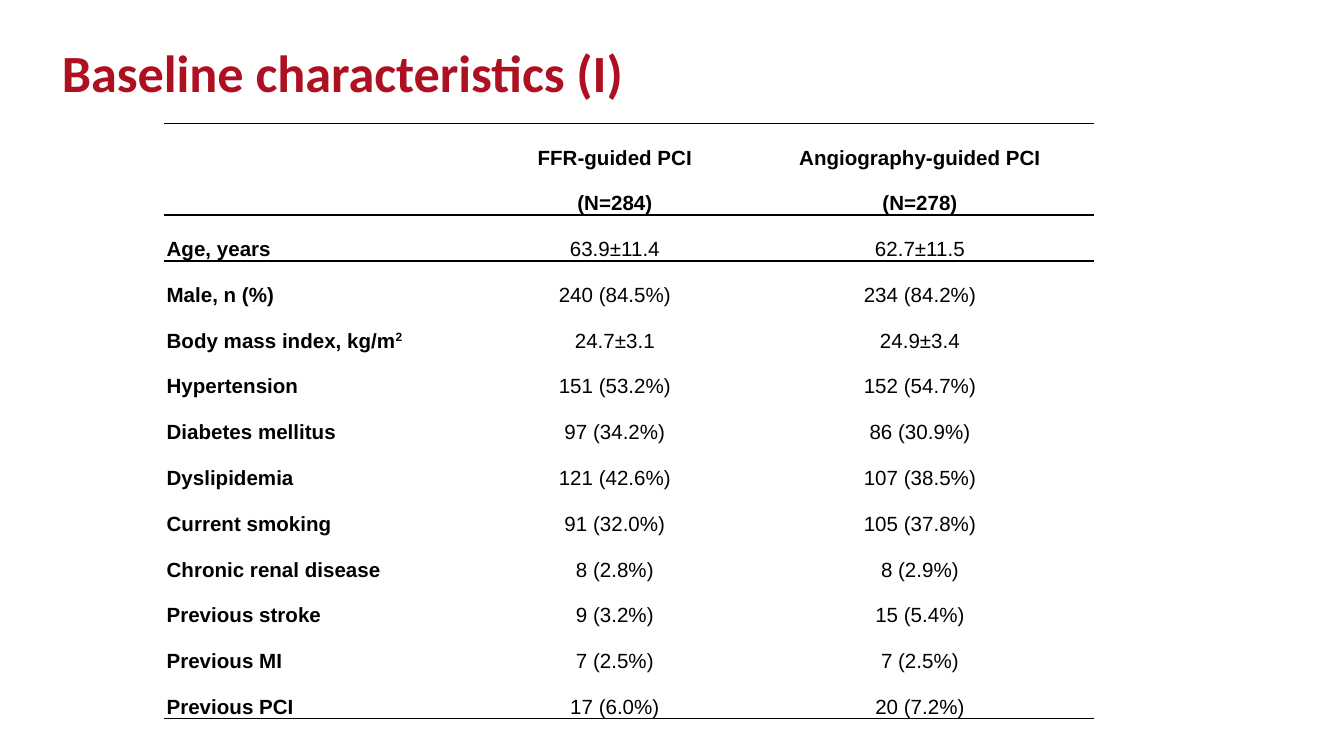
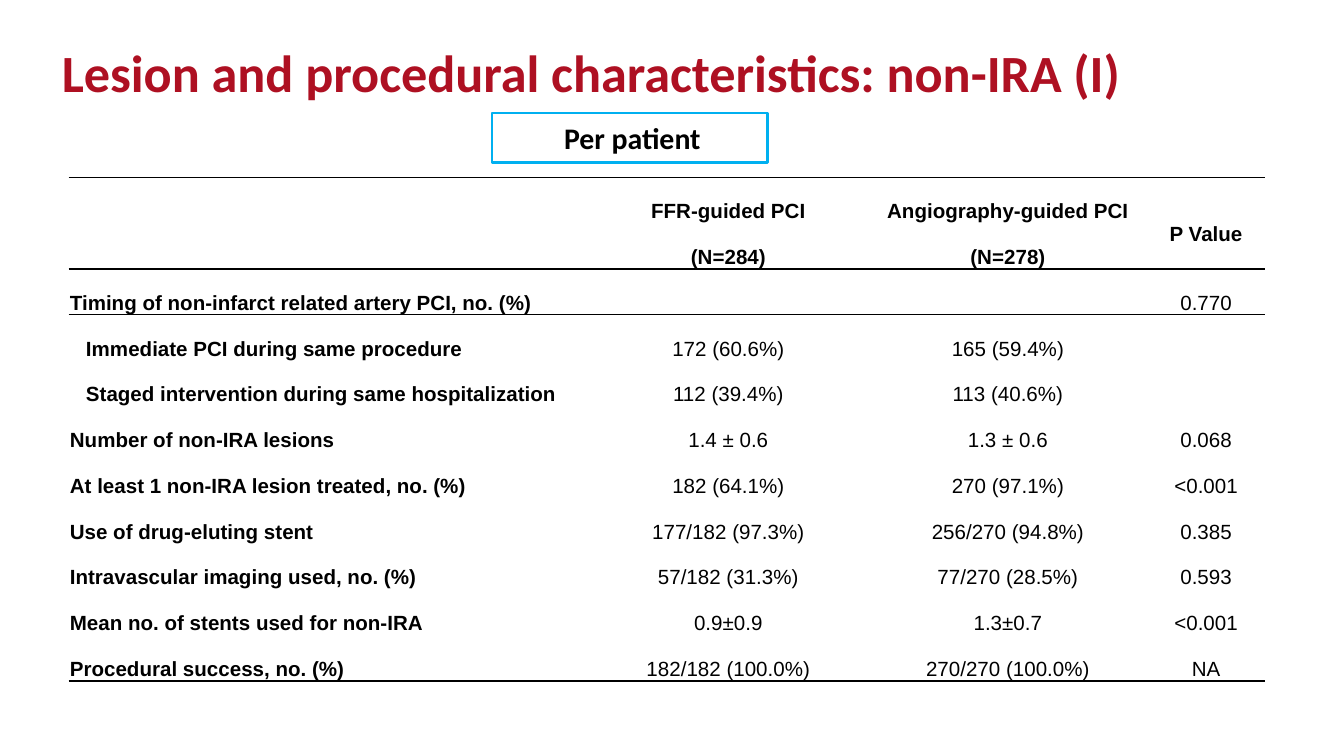
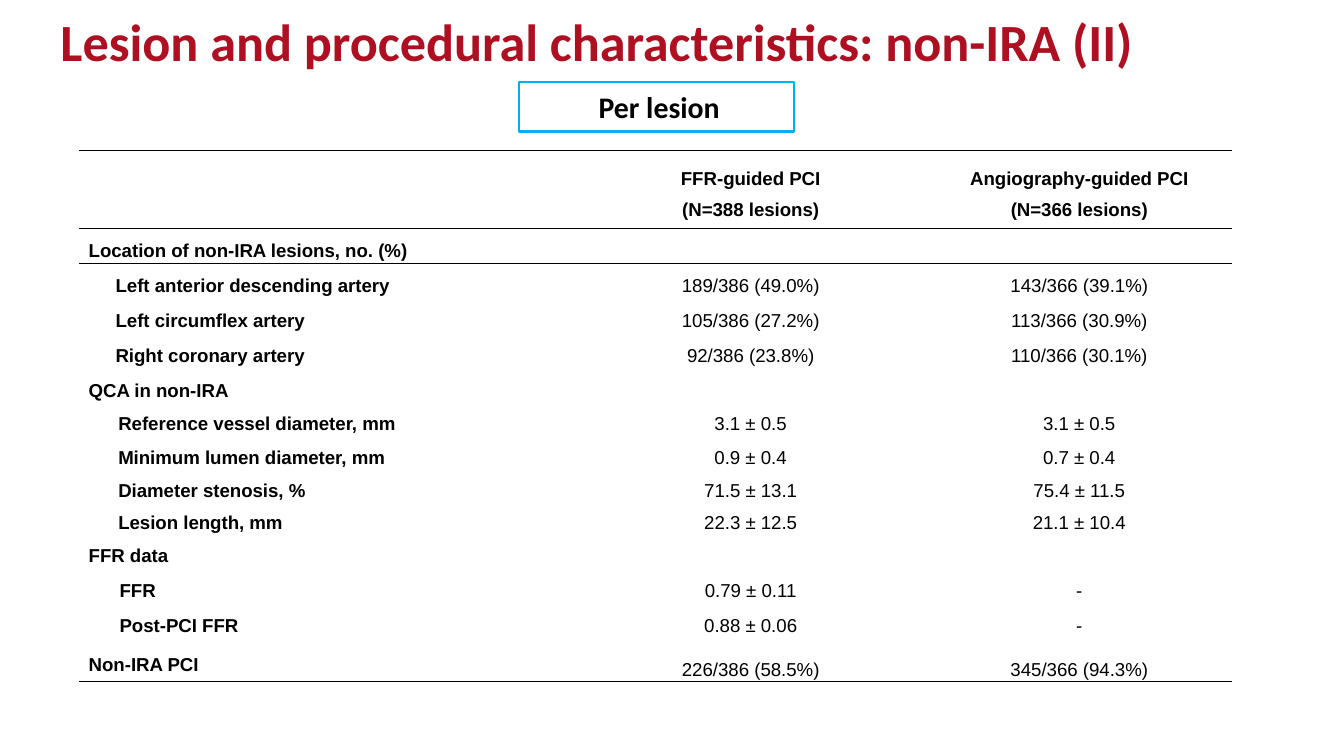
from lxml.etree import SubElement
from pptx import Presentation
from pptx.dml.color import RGBColor
from pptx.enum.shapes import MSO_SHAPE
from pptx.enum.text import MSO_ANCHOR, PP_ALIGN
from pptx.oxml import parse_xml
from pptx.oxml.ns import nsdecls, qn
from pptx.util import Inches, Pt

RED, BLACK, BLUE = "AE1022", "000000", "00B0F0"
PLAIN_TABLE = "{2D5ABB26-0587-4C30-8999-92F81FD0307C}"
TITLE_FORMAT = {"name": "Calibri", "size": Pt(28), "bold": True}
LABEL_FORMAT = {"name": "Calibri", "size": Pt(16), "bold": True}
ARMS = ["FFR-guided PCI", "Angiography-guided PCI"]

SLIDES = [
    {
        "title": "Baseline characteristics (I)",
        "title_at": (0.36, 0.37),
        "table_at": (1.22, 0.92),
        "columns": [2.38, 1.95, 2.59],
        "heights": [0.68] + [0.34] * 11,
        "size": 11, "spacing": 2, "last_spacing": 2, "inset": 0.02,
        "counts": ["(N=284)", "(N=278)"],
        "rows": [
            ("Age, years", 0, "63.9±11.4", "62.7±11.5"),
            ("Male, n (%)", 0, "240 (84.5%)", "234 (84.2%)"),
            ("Body mass index, kg/m^2", 0, "24.7±3.1", "24.9±3.4"),
            ("Hypertension", 0, "151 (53.2%)", "152 (54.7%)"),
            ("Diabetes mellitus", 0, "97 (34.2%)", "86 (30.9%)"),
            ("Dyslipidemia", 0, "121 (42.6%)", "107 (38.5%)"),
            ("Current smoking", 0, "91 (32.0%)", "105 (37.8%)"),
            ("Chronic renal disease", 0, "8 (2.8%)", "8 (2.9%)"),
            ("Previous stroke", 0, "9 (3.2%)", "15 (5.4%)"),
            ("Previous MI", 0, "7 (2.5%)", "7 (2.5%)"),
            ("Previous PCI", 0, "17 (6.0%)", "20 (7.2%)"),
        ],
    },
    {
        "title": "Lesion and procedural characteristics: non-IRA (I)",
        "title_at": (0.36, 0.37),
        "label": "Per patient", "label_at": (3.66, 0.84),
        "table_at": (0.51, 1.32),
        "columns": [3.87, 2.08, 2.08, 0.87],
        "heights": [0.68] + [0.34] * 9,
        "size": 11, "spacing": 2, "last_spacing": 2, "inset": 0.01,
        "counts": ["(N=284)", "(N=278)"],
        "extra": ["P Value"],
        "rows": [
            ("Timing of non-infarct related artery PCI, no. (%)", 0, "", "", "0.770"),
            ("Immediate PCI during same procedure", 0.12, "172 (60.6%)", "165 (59.4%)", ""),
            ("Staged intervention during same hospitalization", 0.12, "112 (39.4%)", "113 (40.6%)", ""),
            ("Number of non-IRA lesions", 0, "1.4 ± 0.6", "1.3 ± 0.6", "0.068"),
            ("At least 1 non-IRA lesion treated, no. (%)", 0, "182 (64.1%)", "270 (97.1%)", "<0.001"),
            ("Use of drug-eluting stent", 0, "177/182 (97.3%)", "256/270 (94.8%)", "0.385"),
            ("Intravascular imaging used, no. (%)", 0, "57/182 (31.3%)", "77/270 (28.5%)", "0.593"),
            ("Mean no. of stents used for non-IRA", 0, "0.9±0.9", "1.3±0.7", "<0.001"),
            ("Procedural success, no. (%)", 0, "182/182 (100.0%)", "270/270 (100.0%)", "NA"),
        ],
    },
    {
        "title": "Lesion and procedural characteristics: non-IRA (II)",
        "title_at": (0.35, 0.14),
        "label": "Per lesion", "label_at": (3.86, 0.61),
        "table_at": (0.59, 1.12),
        "columns": [3.69, 2.61, 2.28],
        "heights": [0.58] + [0.26] * 5 + [0.24, 0.26, 0.23, 0.24] + [0.26] * 3 + [0.32],
        "size": 10, "spacing": 1.5, "last_spacing": 2, "inset": 0.07,
        "counts": ["(N=388 lesions)", "(N=366 lesions)"],
        "rows": [
            ("Location of non-IRA lesions, no. (%)", 0, "", ""),
            ("Left anterior descending artery", 0.2, "189/386 (49.0%)", "143/366 (39.1%)"),
            ("Left circumflex artery", 0.2, "105/386 (27.2%)", "113/366 (30.9%)"),
            ("Right coronary artery", 0.2, "92/386 (23.8%)", "110/366 (30.1%)"),
            ("QCA in non-IRA", 0, "", ""),
            ("Reference vessel diameter, mm", 0.22, "3.1 ± 0.5", "3.1 ± 0.5"),
            ("Minimum lumen diameter, mm", 0.22, "0.9 ± 0.4", "0.7 ± 0.4"),
            ("Diameter stenosis, %", 0.22, "71.5 ± 13.1", "75.4 ± 11.5"),
            ("Lesion length, mm", 0.22, "22.3 ± 12.5", "21.1 ± 10.4"),
            ("FFR data", 0, "", ""),
            ("FFR", 0.23, "0.79 ± 0.11", "-"),
            ("Post-PCI FFR", 0.23, "0.88 ± 0.06", "-"),
            ("Non-IRA PCI", 0, "226/386 (58.5%)", "345/366 (94.3%)"),
        ],
    },
]


def color(value):
    return RGBColor.from_string(value)


def set_all(target, values):
    for name, value in values.items():
        setattr(target, name, value)


def add_span(para, text, style, ink=BLACK):
    span = para.add_run()
    span.text = text
    set_all(span.font, style)
    span.font.color.rgb = color(ink)
    return span


def add_title(page, content):
    box = page.shapes.title
    left, top = content["title_at"]
    set_all(box, {"left": Inches(left), "top": Inches(top),
                  "width": Inches(8.35), "height": Inches(0.47)})
    set_all(box.text_frame, {"vertical_anchor": MSO_ANCHOR.TOP, "word_wrap": True})
    para = box.text_frame.paragraphs[0]
    set_all(para, {"alignment": PP_ALIGN.LEFT, "line_spacing": Pt(25)})
    add_span(para, content["title"], TITLE_FORMAT, RED)


def add_label(page, content):
    left, top = content["label_at"]
    box = page.shapes.add_shape(MSO_SHAPE.RECTANGLE, Inches(left), Inches(top),
                                Inches(2.05), Inches(0.37))
    box.shadow.inherit = False
    box.fill.background()
    box.line.color.rgb = color(BLUE)
    box.line.width = Pt(1.25)
    box.text_frame.word_wrap = True
    para = box.text_frame.paragraphs[0]
    para.alignment = PP_ALIGN.CENTER
    para._p.get_or_add_pPr().set("marL", str(Inches(0.04)))
    add_span(para, content["label"], LABEL_FORMAT)


def add_rule(cell, side):
    rule = parse_xml(f'<a:{side} {nsdecls("a")} w="{Pt(1)}"/>')
    fill = SubElement(rule, qn("a:solidFill"))
    SubElement(fill, qn("a:srgbClr"), val=BLACK)
    cell._tc.get_or_add_tcPr().insert(0, rule)


def fill_cell(cell, lines, content, bold, align, spacing, indent=0, inset=0.01):
    set_all(cell, {"vertical_anchor": MSO_ANCHOR.MIDDLE, "margin_top": 0, "margin_bottom": 0,
                   "margin_left": Inches(inset), "margin_right": Inches(inset)})
    cell.fill.background()
    style = {"name": "Arial", "size": Pt(content["size"]), "bold": bold}
    for number, line in enumerate(lines):
        frame = cell.text_frame
        para = frame.add_paragraph() if number else frame.paragraphs[0]
        if not line:
            para._p.get_or_add_endParaRPr().set("sz", str(content["size"] * 100))
            continue
        set_all(para, {"alignment": align, "line_spacing": float(spacing)})
        if indent:
            para._p.get_or_add_pPr().set("indent", str(Inches(indent)))
        base, _, power = line.partition("^")
        add_span(para, base, style)
        if power:
            add_span(para, power, style)._r.get_or_add_rPr().set("baseline", "30000")


def add_results(page, content):
    columns, heights = content["columns"], content["heights"]
    left, top = content["table_at"]
    table = page.shapes.add_table(len(heights), len(columns), Inches(left), Inches(top),
                                  Inches(sum(columns)), Inches(sum(heights))).table
    set_all(table, {"first_row": False, "horz_banding": False})
    table._tbl.tblPr.find(qn("a:tableStyleId")).text = PLAIN_TABLE
    for column, width in zip(table.columns, columns):
        column.width = Inches(width)
    for row, height in zip(table.rows, heights):
        row.height = Inches(height)

    header = [[""], *zip(ARMS, content["counts"]), *([name] for name in content.get("extra", []))]
    for column, lines in enumerate(header):
        fill_cell(table.cell(0, column), lines, content, True, PP_ALIGN.CENTER, content["spacing"])
    last = len(content["rows"])
    for number, (name, indent, *values) in enumerate(content["rows"], 1):
        fill_cell(table.cell(number, 0), [name], content, True, PP_ALIGN.JUSTIFY,
                  content["spacing"], indent, content["inset"])
        spacing = content["last_spacing"] if number == last else content["spacing"]
        for column, value in enumerate(values, 1):
            fill_cell(table.cell(number, column), [value], content, False,
                      PP_ALIGN.CENTER, spacing)
    for row, side in [(0, "lnB"), (0, "lnT"), (1, "lnT"), (last, "lnB")]:
        for column in range(len(columns)):
            add_rule(table.cell(row, column), side)


def main():
    deck = Presentation()
    set_all(deck, {"slide_width": Pt(720), "slide_height": Pt(405)})
    for content in SLIDES:
        page = deck.slides.add_slide(deck.slide_layouts[5])
        add_title(page, content)
        add_results(page, content)
        if "label" in content:
            add_label(page, content)
    deck.save("out.pptx")


if __name__ == "__main__":
    main()
